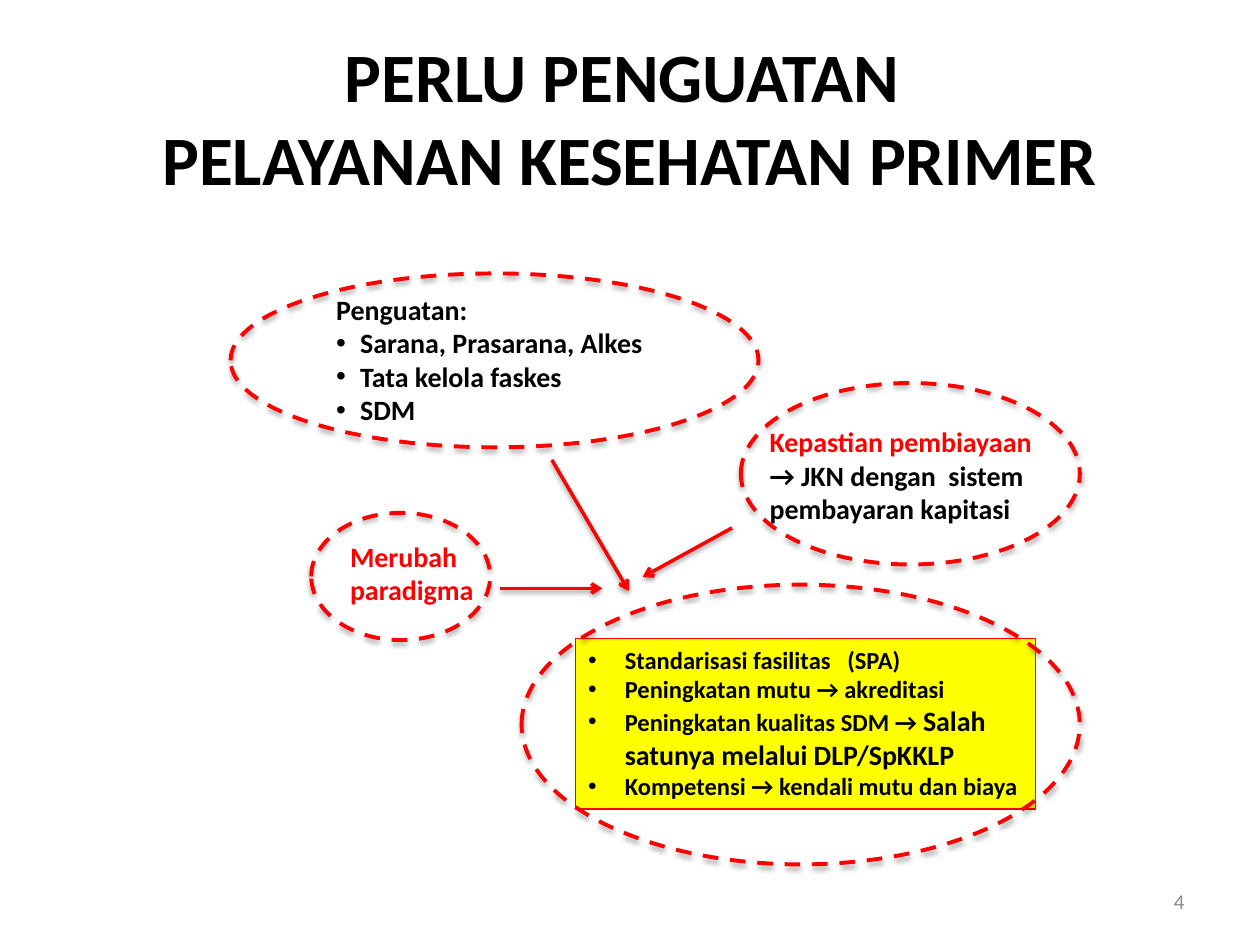
from dataclasses import dataclass

from lxml.etree import SubElement
from pptx import Presentation
from pptx.dml.color import RGBColor
from pptx.enum.dml import MSO_LINE
from pptx.enum.shapes import MSO_CONNECTOR, MSO_SHAPE
from pptx.enum.text import MSO_ANCHOR, MSO_AUTO_SIZE, PP_ALIGN
from pptx.oxml.ns import qn
from pptx.slide import Slide
from pptx.util import Inches, Pt


def color(value):
    return RGBColor.from_string(value)


@dataclass
class DiagramSlide:
    """Holds the diagram style and the slide that its elements are added to."""

    slide: Slide
    font: str = "Calibri"
    ink: str = "000000"
    accent: str = "FF0000"
    highlight: str = "FFFF00"
    muted: str = "8C8C8C"

    def add_run(self, paragraph, text, size, ink=None, bold=True):
        run = paragraph.add_run()
        run.text = text
        run.font.name = self.font
        run.font.size = Pt(size)
        run.font.bold = bold
        run.font.color.rgb = color(ink or self.ink)

    def add_bullet(self, paragraph, indent):
        properties = paragraph._p.get_or_add_pPr()
        properties.set("marL", str(Inches(indent)))
        properties.set("indent", str(-Inches(indent)))
        SubElement(properties, qn("a:buFont"), typeface="Arial")
        SubElement(properties, qn("a:buChar"), char="•")

    def next_paragraph(self, frame):
        first = frame.paragraphs[0]
        return frame.add_paragraph() if first.runs else first

    def text_box(self, left, top, width, height, grow=True):
        box = self.slide.shapes.add_textbox(
            Inches(left), Inches(top), Inches(width), Inches(height))
        frame = box.text_frame
        frame.word_wrap = True
        frame.auto_size = MSO_AUTO_SIZE.SHAPE_TO_FIT_TEXT if grow else MSO_AUTO_SIZE.NONE
        if not grow:
            frame.vertical_anchor = MSO_ANCHOR.MIDDLE
        return frame

    def title(self, lines):
        paragraph = self.text_box(0.5, 0.3, 9, 1.25, grow=False).paragraphs[0]
        paragraph.alignment = PP_ALIGN.CENTER
        for index, line in enumerate(lines):
            if index:
                paragraph.add_line_break()
            self.add_run(paragraph, line, 39.6)

    def page_number(self, number):
        paragraph = self.text_box(7.17, 6.95, 2.33, 0.4, grow=False).paragraphs[0]
        paragraph.alignment = PP_ALIGN.RIGHT
        self.add_run(paragraph, number, 12, self.muted, bold=False)

    def note(self, left, top, width, height, heading, ink=None, body=None, bullets=()):
        frame = self.text_box(left, top, width, height)
        self.add_run(frame.paragraphs[0], heading, 16, ink)
        if body:
            self.add_run(frame.add_paragraph(), body, 16)
        for bullet in bullets:
            paragraph = frame.add_paragraph()
            self.add_bullet(paragraph, 0.19)
            self.add_run(paragraph, bullet, 16)

    def panel(self, left, top, width, height, bullets):
        shape = self.slide.shapes.add_shape(
            MSO_SHAPE.RECTANGLE, Inches(left), Inches(top), Inches(width), Inches(height))
        shape.shadow.inherit = False
        shape.fill.solid()
        shape.fill.fore_color.rgb = color(self.highlight)
        self.outline(shape.line, 0.75)
        frame = shape.text_frame
        frame.word_wrap = True
        frame.auto_size = MSO_AUTO_SIZE.SHAPE_TO_FIT_TEXT
        frame.vertical_anchor = MSO_ANCHOR.TOP
        for runs in bullets:
            paragraph = self.next_paragraph(frame)
            paragraph.alignment = PP_ALIGN.LEFT
            self.add_bullet(paragraph, 0.29)
            for text, size in runs:
                self.add_run(paragraph, text, size)

    def outline(self, line, width):
        line.color.rgb = color(self.accent)
        line.width = Pt(width)

    def drop_shadow(self, effects, distance, opacity):
        shadow = SubElement(
            effects, qn("a:outerShdw"), blurRad=str(Pt(3.1)), dist=str(Pt(distance)),
            dir="5400000", rotWithShape="0")
        tone = SubElement(shadow, qn("a:srgbClr"), val=self.ink)
        SubElement(tone, qn("a:alpha"), val=str(opacity * 1000))

    def ring(self, left, top, width, height):
        shape = self.slide.shapes.add_shape(
            MSO_SHAPE.OVAL, Inches(left), Inches(top), Inches(width), Inches(height))
        shape.fill.background()
        self.outline(shape.line, 2.25)
        shape.line.dash_style = MSO_LINE.DASH
        shape.shadow.inherit = False
        effects = shape._element.spPr.find(qn("a:effectLst"))
        self.drop_shadow(effects, 1.8, 35)

    def arrow(self, start, end):
        connector = self.slide.shapes.add_connector(
            MSO_CONNECTOR.STRAIGHT, *map(Inches, start + end))
        self.outline(connector.line, 2)
        properties = connector._element.spPr
        SubElement(properties.find(qn("a:ln")), qn("a:tailEnd"), type="arrow")
        self.drop_shadow(SubElement(properties, qn("a:effectLst")), 1.6, 38)


def main():
    presentation = Presentation()
    presentation.slide_width = Inches(10)
    presentation.slide_height = Inches(7.5)
    diagram = DiagramSlide(presentation.slides.add_slide(presentation.slide_layouts[6]))

    diagram.title(["PERLU PENGUATAN ", "PELAYANAN KESEHATAN PRIMER"])
    diagram.page_number("4")
    diagram.note(2.57, 2.27, 2.88, 1.18, "Penguatan:",
                 bullets=["Sarana, Prasarana, Alkes", "Tata kelola faskes", "SDM"])
    diagram.note(6.01, 3.32, 2.56, 0.91, "Kepastian pembiayaan", diagram.accent,
                 body="→ JKN dengan  sistem pembayaran kapitasi")
    diagram.note(2.68, 4.23, 1.47, 0.64, "Merubah paradigma", diagram.accent)

    for bounds in [(1.83, 2.17, 4.19, 1.38), (2.47, 4.07, 1.42, 1.01),
                   (5.88, 3.04, 2.69, 1.44)]:
        diagram.ring(*bounds)

    diagram.panel(4.57, 5.07, 3.65, 1.35, [
        [("Standarisasi fasilitas   (SPA)", 14)],
        [("Peningkatan mutu → akreditasi", 14)],
        [("Peningkatan kualitas SDM → ", 14), ("Salah satunya melalui DLP/SpKKLP", 16)],
        [("Kompetensi → kendali mutu dan biaya", 14)],
    ])
    diagram.ring(4.14, 4.64, 4.43, 2.22)

    for start, end in [((4.38, 3.65), (4.99, 4.69)), ((5.81, 4.19), (5.1, 4.58)),
                       ((3.97, 4.67), (4.78, 4.67))]:
        diagram.arrow(start, end)

    presentation.save("out.pptx")


if __name__ == "__main__":
    main()
